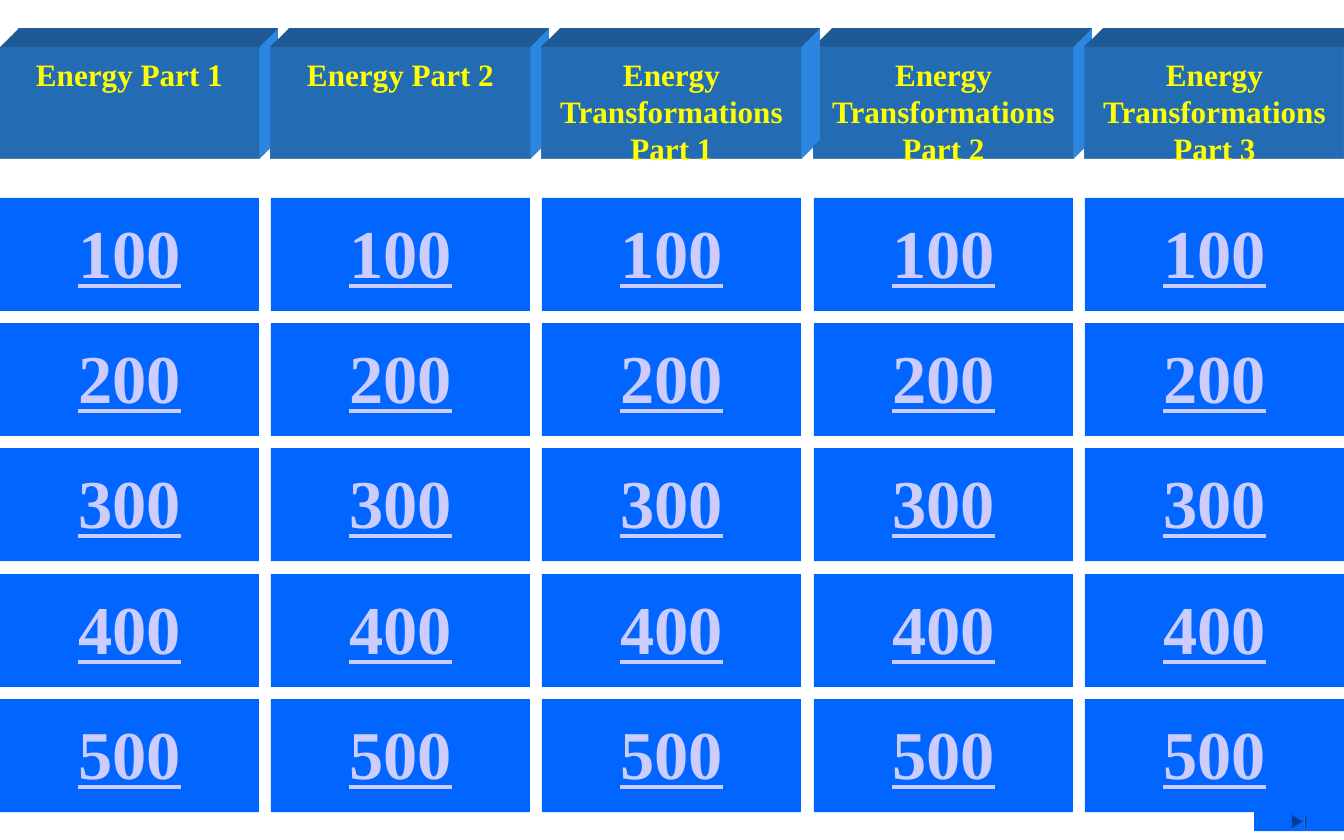
from lxml import etree
from pptx import Presentation
from pptx.dml.color import RGBColor
from pptx.enum.shapes import MSO_SHAPE
from pptx.enum.text import MSO_ANCHOR, PP_ALIGN
from pptx.util import Pt

RECTANGLE = MSO_SHAPE.RECTANGLE
END_BUTTON = MSO_SHAPE.ACTION_BUTTON_END
TOP = MSO_ANCHOR.TOP
CENTER = PP_ALIGN.CENTER

CATEGORIES = [
    "Energy Part 1",
    "Energy Part 2",
    "Energy Transformations Part 1",
    "Energy Transformations Part 2",
    "Energy Transformations Part 3",
]
STACKING = [0, 1, 3, 4, 2]
POINTS = ["100", "200", "300", "400", "500"]

TILE_BLUE = RGBColor(0x00, 0x66, 0xFF)
HEADER_BLUE = RGBColor(0x33, 0x99, 0xFF)
POINTS_LILAC = RGBColor(0xCC, 0xCC, 0xFF)
CATEGORY_YELLOW = RGBColor(0xFF, 0xFF, 0x00)
FONT = "Times New Roman"

PX = 914400 // 112
SLIDE_W, SLIDE_H = 1344, 840
TILE_W, TILE_H = 259, 113
HEADER_TOP, HEADER_H = 47, 112
FIRST_ROW, LAST_ROW = 198, 699
INSET = 6
POINTS_INSET = 12
CATEGORY_INSET = 8

DRAWING = "http://schemas.openxmlformats.org/drawingml/2006/main"
BLOCK_DEPTH = f"""<a:spPr xmlns:a="{DRAWING}">
<a:scene3d><a:camera prst="legacyObliqueTopRight"/>
<a:lightRig rig="legacyFlat3" dir="b"/></a:scene3d>
<a:sp3d extrusionH="430200" prstMaterial="legacyMatte">
<a:bevelT w="13500" h="13500" prst="angle"/>
<a:bevelB w="13500" h="13500" prst="angle"/>
<a:extrusionClr><a:srgbClr val="{HEADER_BLUE}"/></a:extrusionClr>
</a:sp3d></a:spPr>"""


def spread(first, last, count):
    return [round(first + (last - first) * i / (count - 1)) for i in range(count)]


def add_block(slide, preset, box, fill):
    block = slide.shapes.add_shape(preset, *(length * PX for length in box))
    block.shadow.inherit = False
    block.fill.solid()
    block.fill.fore_color.rgb = fill
    block.line.fill.background()
    return block


def add_label(block, text, size, color, inset_top):
    frame = block.text_frame
    frame.word_wrap = True
    frame.vertical_anchor = TOP
    frame.margin_top = inset_top * PX
    frame.margin_bottom = INSET * PX
    paragraph = frame.paragraphs[0]
    paragraph.alignment = CENTER
    run = paragraph.add_run()
    run.text = text
    run.font.name = FONT
    run.font.size = Pt(size)
    run.font.bold = True
    run.font.color.rgb = color
    return run


def main():
    deck = Presentation()
    deck.slide_width, deck.slide_height = SLIDE_W * PX, SLIDE_H * PX
    board = deck.slides.add_slide(deck.slide_layouts[6])
    columns = spread(0, SLIDE_W - TILE_W, len(CATEGORIES))
    rows = spread(FIRST_ROW, LAST_ROW, len(POINTS))

    for top, points in zip(rows, POINTS):
        for left in columns:
            tile = add_block(board, RECTANGLE, (left, top, TILE_W, TILE_H), TILE_BLUE)
            label = add_label(tile, points, 44, POINTS_LILAC, POINTS_INSET)
            label.font.underline = True

    for index in STACKING:
        box = (columns[index], HEADER_TOP, TILE_W, HEADER_H)
        header = add_block(board, RECTANGLE, box, HEADER_BLUE)
        add_label(header, CATEGORIES[index], 20, CATEGORY_YELLOW, CATEGORY_INSET)
        header._element.spPr.extend(list(etree.fromstring(BLOCK_DEPTH)))

    add_block(board, END_BUTTON, (1254, 812, 90, 19), TILE_BLUE)
    deck.save("out.pptx")


if __name__ == "__main__":
    main()
